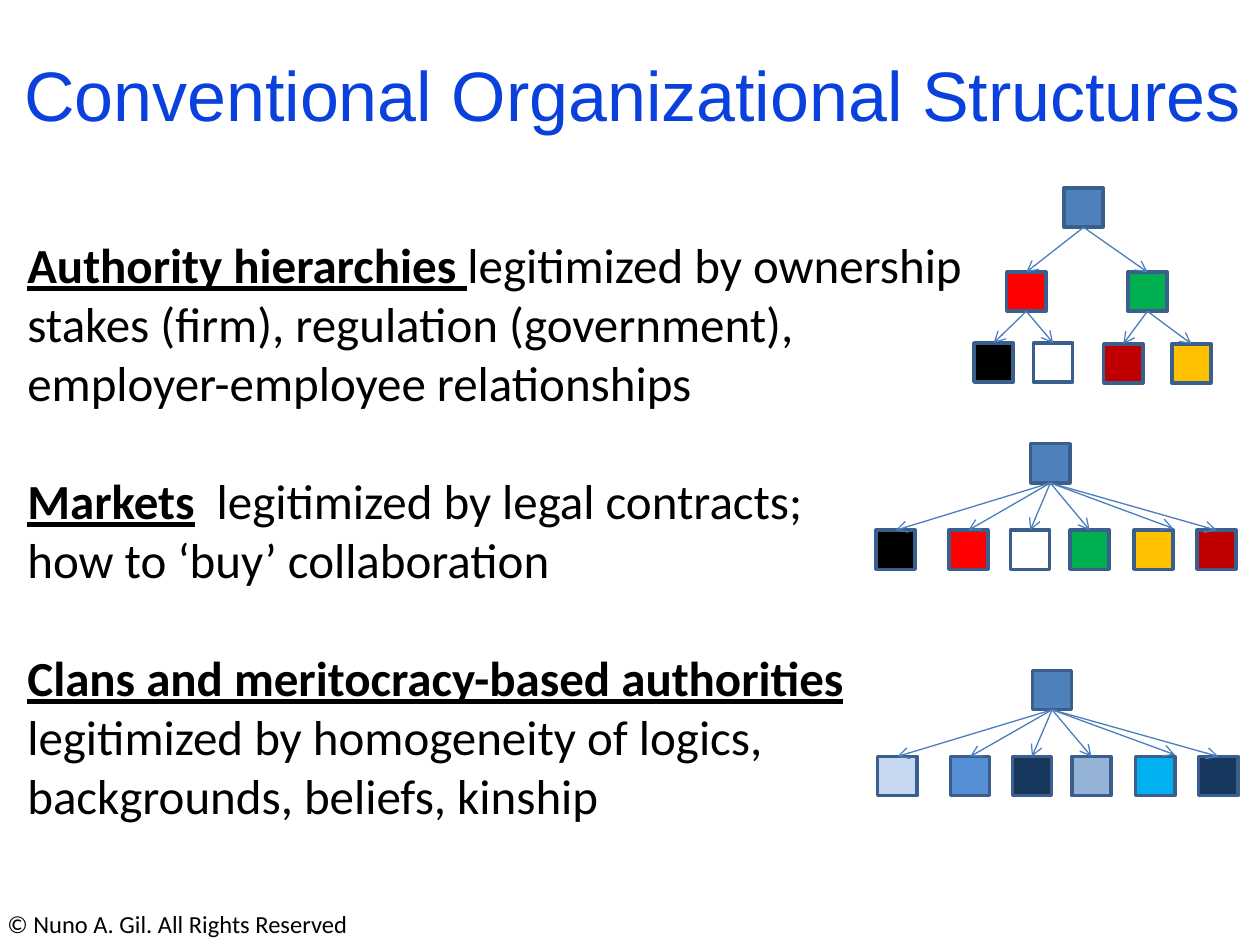
from pptx import Presentation
from pptx.dml.color import RGBColor
from pptx.enum import shapes, text
from pptx.oxml.ns import qn
from pptx.util import Pt
from lxml import etree

COLORS = {
    "title": "0A41DC", "black": "000000", "white": "FFFFFF",
    "root": "4F81BD", "border": "3A5F8C", "arrow": "4B7EBC",
    "red": "FF0000", "green": "00B050", "crimson": "C00000", "amber": "FFC000",
    "pale": "C6D9F1", "blue": "558ED5", "navy": "17375E",
    "steel": "95B3D7", "cyan": "00B0F0",
}
SIDE = 22.4
LINE = 33.7


def add_node(left, top, color):
    node = page.shapes.add_shape(
        shapes.MSO_SHAPE.RECTANGLE, Pt(left), Pt(top), Pt(SIDE), Pt(SIDE))
    node.shadow.inherit = False
    node.fill.solid()
    node.fill.fore_color.rgb = RGBColor.from_string(COLORS[color])
    node.line.color.rgb = RGBColor.from_string(COLORS["border"])
    node.line.width = Pt(2)
    return node


def add_arrow(parent, child, to_corner=False):
    """Join parent's bottom to child's top middle, or end near its top right corner."""
    arrow = page.shapes.add_connector(
        shapes.MSO_CONNECTOR.STRAIGHT, 0, 0, child.left + child.width, child.top - Pt(1))
    arrow.begin_connect(parent, 2)
    if not to_corner:
        arrow.end_connect(child, 0)
    arrow.line.color.rgb = RGBColor.from_string(COLORS["arrow"])
    arrow.line.width = Pt(0.75)
    etree.SubElement(arrow.line._get_or_add_ln(), qn("a:tailEnd"), type="arrow")
    etree.SubElement(arrow._element.spPr, qn("a:effectLst"))


deck = Presentation()
deck.slide_width, deck.slide_height = Pt(720), Pt(540)
page = deck.slides.add_slide(deck.slide_layouts[5])

# Title
title = page.shapes.title
title.left, title.top, title.width, title.height = Pt(1.4), Pt(26), Pt(720), Pt(70)
frame = title.text_frame
frame.text = "Conventional Organizational Structures"
frame.vertical_anchor = text.MSO_ANCHOR.MIDDLE
frame.margin_bottom = Pt(19)
para = frame.paragraphs[0]
para.alignment = text.PP_ALIGN.CENTER
para.font.name, para.font.size = "Arial", Pt(40)
para.font.color.rgb = RGBColor.from_string(COLORS["title"])

# Structures and what legitimizes them
sections = [
    ("Authority hierarchies ", "legitimized by ownership stakes (firm), "
     "regulation (government), employer-employee relationships"),
    ("Markets", "  legitimized by legal contracts;\vhow to ‘buy’ collaboration"),
    ("Clans and meritocracy-based authorities ",
     "legitimized by homogeneity of logics, backgrounds, beliefs, kinship"),
]
body = page.shapes.add_textbox(Pt(8.6), Pt(130.5), Pt(556), Pt(345))
frame = body.text_frame
frame.word_wrap = True
for i, (name, detail) in enumerate(sections):
    para = frame.add_paragraph() if i else frame.paragraphs[0]
    para.text = detail
    span = para.add_run()
    span.text = name
    span.font.bold = span.font.underline = True
    para._p.insert(0, span._r)
    para.font.name, para.font.size = "Calibri", Pt(28)
    para.font.color.rgb = RGBColor.from_string(COLORS["black"])
    para.line_spacing = Pt(LINE)
    para.space_before = Pt(LINE if i else 0)

# Footer
footer = page.shapes.add_textbox(Pt(-2.9), Pt(516), Pt(723), Pt(24.5))
footer.text_frame.word_wrap = True
para = footer.text_frame.paragraphs[0]
para.text = "© Nuno A. Gil. All Rights Reserved"
para.font.name, para.font.size = "Calibri", Pt(14)
para.font.color.rgb = RGBColor.from_string(COLORS["black"])

# Authority hierarchy: two managers, each with two reports
root = add_node(608, 107.5, "root")
branches = [
    (575.3, "red", [(556.6, 196, "black"), (590.6, 196, "white")]),
    (644.5, "green", [(630.7, 196.5, "crimson"), (669.6, 196.5, "amber")]),
]
for left, color, reports in branches:
    manager = add_node(left, 155.5, color)
    add_arrow(root, manager)
    for report in reports:
        add_arrow(manager, add_node(*report))

# Market and clan: one root over six members
offsets = [-88.4, -46.8, -11.5, 22.5, 59, 95]
fans = [
    (589, 253.6, 303, ["black", "red", "white", "green", "amber", "crimson"]),
    (590, 383.2, 432.3, ["pale", "blue", "navy", "steel", "cyan", "navy"]),
]
for left, root_top, member_top, colors in fans:
    root = add_node(left, root_top, "root")
    for i, (offset, color) in enumerate(zip(offsets, colors)):
        member = add_node(left + offset, member_top, color)
        add_arrow(root, member, to_corner=i == 4)

deck.save("out.pptx")
